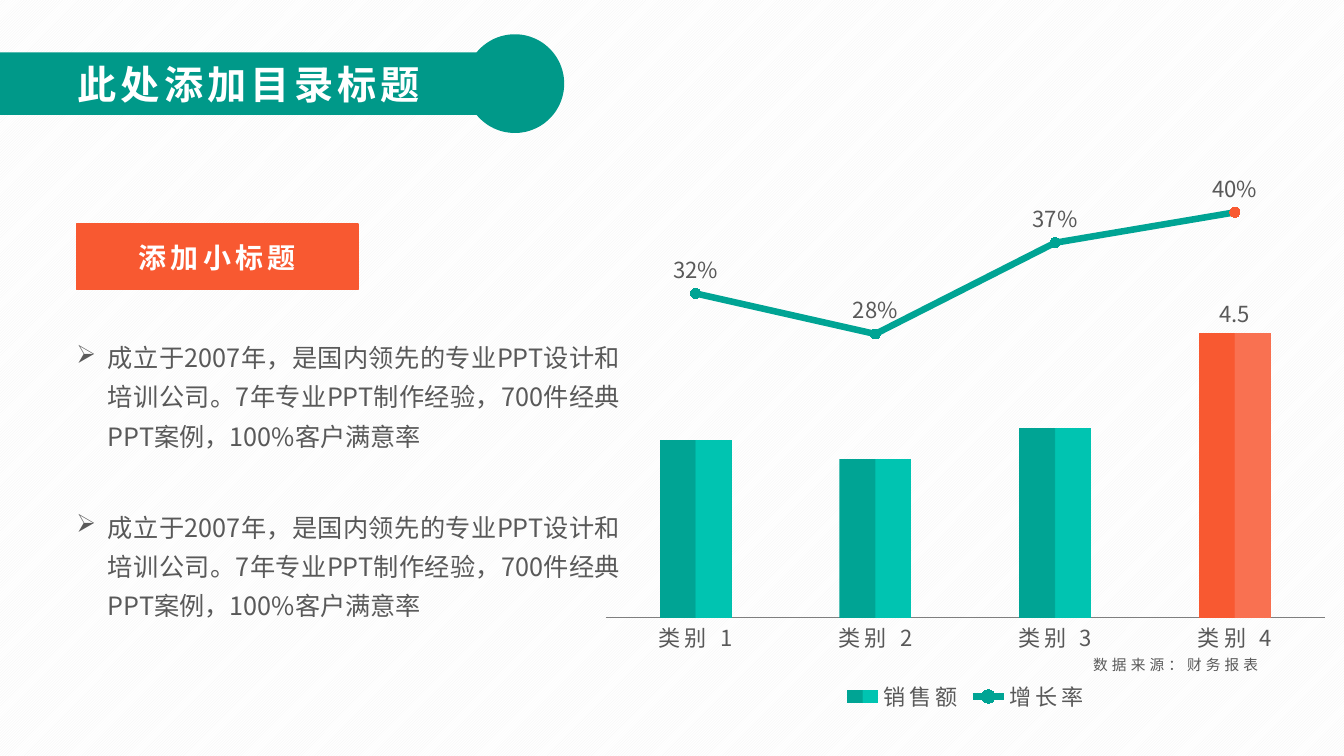
from dataclasses import dataclass
from math import asin, cos, pi, sin

from pptx import Presentation
from pptx.chart.data import CategoryChartData as Data
from pptx.dml.color import RGBColor as Color
from pptx.enum.chart import XL_CHART_TYPE as Chart
from pptx.enum.chart import XL_LABEL_POSITION as Spot
from pptx.enum.chart import XL_LEGEND_POSITION as Side
from pptx.enum.chart import XL_MARKER_STYLE as Mark
from pptx.enum.chart import XL_TICK_LABEL_POSITION as Label
from pptx.enum.chart import XL_TICK_MARK as Tick
from pptx.enum.dml import MSO_PATTERN as Pattern
from pptx.enum.shapes import MSO_SHAPE as Shape
from pptx.enum.text import MSO_ANCHOR as Anchor
from pptx.enum.text import MSO_AUTO_SIZE as Fit
from pptx.enum.text import PP_ALIGN as Align
from pptx.oxml import parse_xml as to_xml
from pptx.oxml.ns import nsdecls, qn
from pptx.util import Pt


@dataclass(frozen=True)
class Theme:
    face: str = "Noto Sans CJK SC"
    latin: str = "Calibri"
    white: str = "FFFFFF"
    stripe: str = "F2F2F2"
    black: str = "000000"
    grey: str = "595959"
    rule: str = "7F7F7F"
    banner: str = "009989"
    teal: str = "00A494"
    mint: str = "00C4B1"
    red: str = "F85931"
    coral: str = "F97151"
    title: float = 28
    head: float = 20
    body: float = 18
    chart: float = 17.8
    axis: float = 15.8
    note: float = 10.5


THEME = Theme()
POINT = "成立于2007年，是国内领先的专业PPT设计和培训公司。7年专业PPT制作经验，700件经典PPT案例，100%客户满意率"


def rgb(code):
    return Color.from_string(code)


def style(font, size, color=THEME.grey, bold=False, gap=0, face=THEME.face):
    font.size, font.bold, font.name = Pt(size), bold, face
    font.fill.solid()
    font.fill.fore_color.rgb = rgb(color)
    mark = font._rPr
    if gap:
        mark.set("spc", str(gap * 100))
    mark.find(qn("a:latin")).addnext(to_xml(f'<a:ea {nsdecls("a")} typeface="{face}"/>'))


def write(shape, text, align=Align.LEFT, space=None, bullet=None, **look):
    frame = shape.text_frame
    frame.word_wrap, frame.auto_size = True, Fit.NONE
    frame.vertical_anchor = Anchor.MIDDLE
    para = frame.paragraphs[0]
    para.alignment = align
    if space:
        para.line_spacing = space
    if bullet:
        props = para._p.get_or_add_pPr()
        props.set("marL", str(Pt(22.5)))
        props.set("indent", str(-Pt(22.5)))
        props.append(to_xml(f'<a:buChar {nsdecls("a")} char="{bullet}"/>'))
    run = para.add_run()
    run.text = text
    style(run.font, **look)


def place(shape, box):
    shape.left, shape.top, shape.width, shape.height = map(Pt, box)


def header(slide, box):
    left, top, width, height = box
    radius, half = height / 2, 22.3
    mid_x, mid_y = left + width - radius, top + radius
    turn = pi - asin(half / radius)
    steps = 120
    arc = [-turn + 2 * turn * step / steps for step in range(steps + 1)]
    curve = [(mid_x + radius * cos(a), mid_y + radius * sin(a)) for a in arc]
    path = slide.shapes.build_freeform(Pt(left), Pt(mid_y - half))
    edge = curve + [(left, mid_y + half)]
    path.add_line_segments([(Pt(x), Pt(y)) for x, y in edge], close=True)
    banner = path.convert_to_shape()
    banner.shadow.inherit = False
    banner.fill.solid()
    banner.fill.fore_color.rgb = rgb(THEME.banner)
    banner.line.fill.background()
    title = slide.shapes.title
    place(title, (left + 48.2, mid_y - 20.5, 283, 41))
    write(title, "此处添加目录标题", size=THEME.title, color=THEME.white, bold=True, gap=3)
    banner.element.addnext(title.element)


def notes(slide, box):
    left, top, width, height = box
    tag = slide.shapes.add_shape(Shape.RECTANGLE, *map(Pt, (left + 7.2, top, 201, 47)))
    tag.shadow.inherit = False
    tag.fill.solid()
    tag.fill.fore_color.rgb = tag.line.color.rgb = rgb(THEME.red)
    tag.line.width = Pt(1)
    write(tag, "添加小标题", Align.CENTER, size=THEME.head, color=THEME.white, bold=True, gap=3)
    tall, pitch = 91.5, 121
    first = top + height - tall - pitch
    for row in range(2):
        item = slide.shapes.add_textbox(*map(Pt, (left, first + row * pitch, width, tall)))
        write(item, POINT, Align.JUSTIFY, space=1.3, bullet="➢", size=THEME.body)


def blend(fill, dark, light):
    fill.gradient()
    fill.gradient_angle = 0
    for stop, color, where in zip(fill.gradient_stops, (dark, light), (0.49, 0.51)):
        stop.color.rgb, stop.position = rgb(color), where


def split(chart):
    area = chart._chartSpace.find(".//" + qn("c:plotArea"))
    for old in area.findall(qn("c:layout")):
        area.remove(old)
    area.insert(0, to_xml(
        f'<c:layout {nsdecls("c")}><c:manualLayout><c:layoutTarget val="inner"/>'
        '<c:xMode val="edge"/><c:yMode val="edge"/><c:x val="0.02"/><c:y val="0.02"/>'
        '<c:w val="0.96"/><c:h val="0.82"/></c:manualLayout></c:layout>'))
    bars = area.find(qn("c:barChart"))
    rate = bars.findall(qn("c:ser"))[1]
    for flag in rate.findall(qn("c:invertIfNegative")):
        rate.remove(flag)
    lines = to_xml(
        f'<c:lineChart {nsdecls("c")}><c:grouping val="standard"/><c:varyColors val="0"/>'
        '<c:marker val="1"/><c:axId val="501"/><c:axId val="502"/></c:lineChart>')
    lines.insert(2, rate)
    bars.addnext(lines)
    last = area.findall(qn("c:valAx"))[-1]
    right = to_xml(
        f'<c:valAx {nsdecls("c", "a")}><c:axId val="502"/><c:scaling><c:orientation val="minMax"/>'
        '<c:max val="0.5"/><c:min val="0"/></c:scaling><c:delete val="0"/><c:axPos val="r"/>'
        '<c:numFmt formatCode="0%" sourceLinked="0"/><c:majorTickMark val="none"/>'
        '<c:minorTickMark val="none"/><c:tickLblPos val="none"/>'
        '<c:spPr><a:ln><a:noFill/></a:ln></c:spPr><c:crossAx val="501"/>'
        '<c:crosses val="max"/><c:majorUnit val="0.1"/></c:valAx>')
    under = to_xml(
        f'<c:catAx {nsdecls("c")}><c:axId val="501"/><c:scaling><c:orientation val="minMax"/>'
        '</c:scaling><c:delete val="1"/><c:axPos val="b"/><c:tickLblPos val="nextTo"/>'
        '<c:crossAx val="502"/><c:crosses val="autoZero"/></c:catAx>')
    last.addnext(right)
    right.addnext(under)


def axes(chart):
    base, left = chart.category_axis, chart.value_axis
    for axis in (base, left):
        axis.major_tick_mark = axis.minor_tick_mark = Tick.NONE
        axis.has_major_gridlines = False
    base.format.line.color.rgb = rgb(THEME.rule)
    base.format.line.width = Pt(0.75)
    style(base.tick_labels.font, THEME.axis, gap=3)
    left.minimum_scale, left.maximum_scale, left.major_unit = 0, 8, 1
    left.tick_label_position = Label.NONE
    left.format.line.fill.background()


def dot(item, color):
    item.format.line.color.rgb = rgb(color)
    item.format.line.width = Pt(4.69)
    item.marker.style, item.marker.size = Mark.CIRCLE, 7
    item.marker.format.fill.solid()
    item.marker.format.fill.fore_color.rgb = rgb(color)
    item.marker.format.line.color.rgb = rgb(color)


def graph(slide, box):
    data = Data()
    data.categories = [f"类别 {number}" for number in range(1, 5)]
    data.add_series("销售额", (2.8, 2.5, 3, 4.5), "General")
    data.add_series("增长率", (0.32, 0.28, 0.37, 0.4), "0%")
    chart = slide.shapes.add_chart(Chart.COLUMN_CLUSTERED, *map(Pt, box), data).chart
    chart.has_title = False
    style(chart.font, THEME.chart, THEME.black, face=THEME.latin)
    chart.has_legend = True
    chart.legend.position, chart.legend.include_in_layout = Side.BOTTOM, False
    style(chart.legend.font, THEME.axis, gap=3)
    axes(chart)
    split(chart)
    bars, lines = chart.plots
    bars.gap_width, bars.vary_by_categories = 150, False
    sales, rate = bars.series[0], lines.series[0]
    blend(sales.format.fill, THEME.teal, THEME.mint)
    blend(sales.points[3].format.fill, THEME.red, THEME.coral)
    peak = sales.points[3].data_label
    peak.position = Spot.OUTSIDE_END
    style(peak.font, THEME.axis)
    sales.data_labels.show_value = False
    rate.smooth = False
    dot(rate, THEME.teal)
    dot(rate.points[3], THEME.red)
    labels = rate.data_labels
    labels.show_value, labels.position = True, Spot.ABOVE
    labels.number_format, labels.number_format_is_linked = "0%", False
    style(labels.font, THEME.axis)
    left, top, width, height = box
    source = slide.shapes.add_textbox(*map(Pt, (left + 191, top + 394, 293, 20)))
    write(source, "数据来源：财务报表", Align.RIGHT, size=THEME.note, gap=3)


def main():
    deck = Presentation()
    deck.slide_width, deck.slide_height = Pt(960), Pt(540)
    slide = deck.slides.add_slide(deck.slide_layouts[5])
    fill = slide.background.fill
    fill.patterned()
    fill.pattern = Pattern.LIGHT_UPWARD_DIAGONAL
    fill.fore_color.rgb, fill.back_color.rgb = rgb(THEME.stripe), rgb(THEME.white)
    graph(slide, (422, 70.5, 535, 441.5))
    notes(slide, (47.5, 160, 402.5, 287))
    header(slide, (0, 24.5, 403, 70.5))
    deck.save("out.pptx")


if __name__ == "__main__":
    main()
